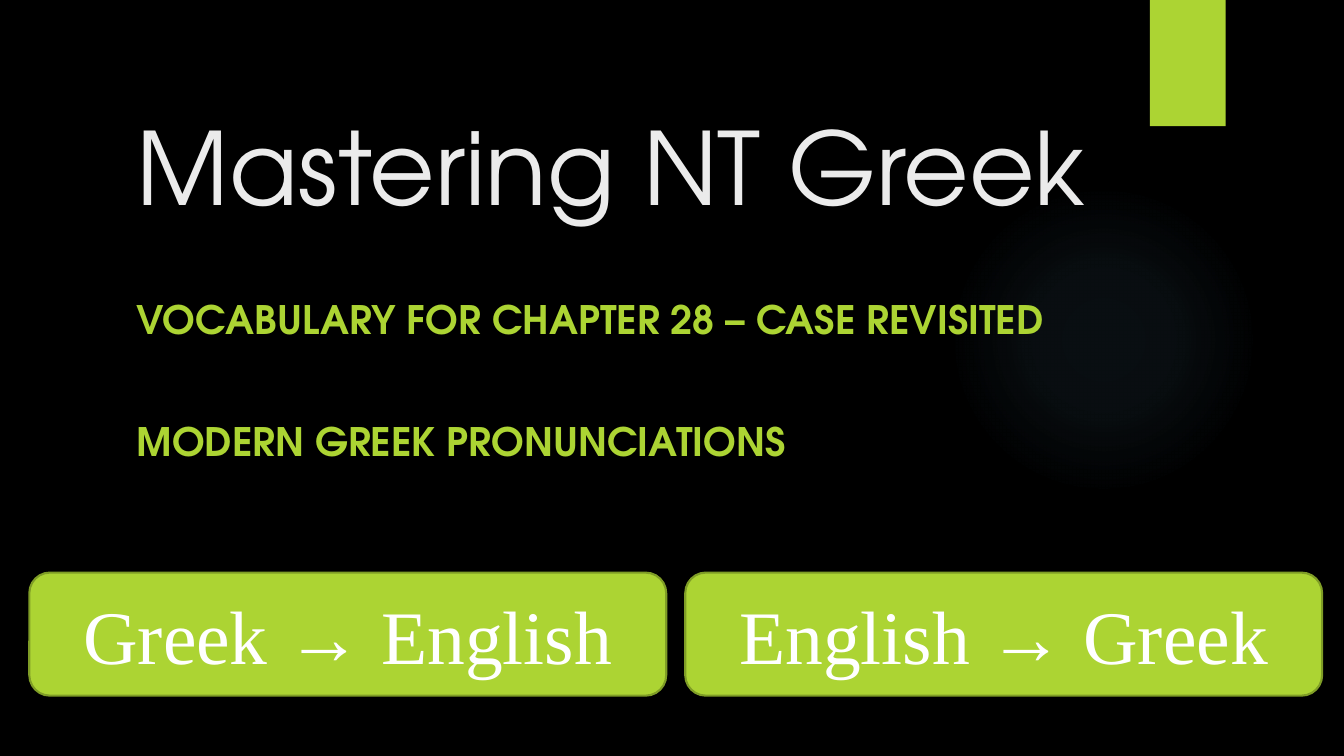
"""Build the title slide of a Greek vocabulary lesson."""
from dataclasses import dataclass

from pptx import Presentation
from pptx.dml.color import RGBColor
from pptx.enum.shapes import MSO_SHAPE as Preset
from pptx.enum.text import MSO_ANCHOR as Anchor, PP_ALIGN as Align
from pptx.oxml import parse_xml
from pptx.oxml.ns import nsdecls
from pptx.shapes.autoshape import Shape
from pptx.slide import Slide
from pptx.text.text import Font
from pptx.util import Cm, Pt

COLORS = {
    "background": "000000",
    "title": "EBEBEB",
    "accent": "ACD433",
    "outline": "7F9D26",
    "button_text": "FFFFFF",
    "glow": "7AC4F0",
}
HEADING_FONT = "TeX Gyre Adventor"
BUTTON_FONT = "Times New Roman"
GLOW_STOPS = ((0, 7), (36, 6), (69, 0))
BUTTON_LEFT, BUTTON_PITCH = 0.74, 16.53


@dataclass(frozen=True)
class Box:
    left: float
    top: float
    width: float
    height: float

    def lengths(self) -> tuple[Cm, Cm, Cm, Cm]:
        return Cm(self.left), Cm(self.top), Cm(self.width), Cm(self.height)


@dataclass(frozen=True)
class TextBlock:
    box: Box
    lines: tuple[str, ...]
    size: int
    color: str
    bold: bool
    anchor: Anchor
    gap: float = 0


TEXT_BLOCKS = (
    TextBlock(Box(3.2, 1.78, 25.5, 4.04), ("Mastering NT Greek",),
              72, "title", False, Anchor.BOTTOM),
    TextBlock(Box(3.2, 7.32, 26.49, 6.83),
              ("VOCABULARY FOR CHAPTER 28 – CASE REVISITED", "MODERN GREEK PRONUNCIATIONS"),
              28, "accent", True, Anchor.TOP, 53.5),
)
BUTTON_LABELS = ("Greek → English", "English → Greek")


def color(name: str) -> RGBColor:
    return RGBColor.from_string(COLORS[name])


def style_font(font: Font, name: str, size: int, color_name: str, bold: bool = False) -> None:
    font.name, font.size, font.bold = name, Pt(size), bold
    font.color.rgb = color(color_name)


def add_filled_shape(slide: Slide, preset: Preset, box: Box) -> Shape:
    shape = slide.shapes.add_shape(preset, *box.lengths())
    shape.shadow.inherit = False
    shape.fill.solid()
    shape.fill.fore_color.rgb = color("accent")
    shape.line.fill.background()
    return shape


def add_glow(slide: Slide, box: Box) -> None:
    shape = add_filled_shape(slide, Preset.OVAL, box)
    stops = "".join(
        f'<a:gs pos="{position * 1000}"><a:srgbClr val="{COLORS["glow"]}">'
        f'<a:alpha val="{alpha * 1000}"/></a:srgbClr></a:gs>'
        for position, alpha in GLOW_STOPS
    )
    gradient = parse_xml(
        f'<a:gradFill {nsdecls("a")} rotWithShape="1"><a:gsLst>{stops}</a:gsLst>'
        '<a:path path="circle"><a:fillToRect l="50000" t="50000" r="50000" b="50000"/>'
        "</a:path></a:gradFill>"
    )
    properties = shape.element.spPr
    properties.replace(properties.find("{*}solidFill"), gradient)


def add_text_block(slide: Slide, block: TextBlock) -> None:
    frame = slide.shapes.add_textbox(*block.box.lengths()).text_frame
    frame.word_wrap = True
    frame.vertical_anchor = block.anchor
    frame.text = "\n".join(block.lines)
    for index, paragraph in enumerate(frame.paragraphs):
        paragraph.space_before = Pt(block.gap if index else 0)
        style_font(paragraph.font, HEADING_FONT, block.size, block.color, block.bold)


def add_button(slide: Slide, box: Box, label: str) -> None:
    shape = add_filled_shape(slide, Preset.ROUNDED_RECTANGLE, box)
    shape.line.color.rgb = color("outline")
    shape.line.width = Pt(1.5)
    frame = shape.text_frame
    frame.vertical_anchor = Anchor.MIDDLE
    frame.text = label
    paragraph = frame.paragraphs[0]
    paragraph.alignment = Align.CENTER
    style_font(paragraph.font, BUTTON_FONT, 54, "button_text")


def main() -> None:
    presentation = Presentation()
    presentation.slide_width, presentation.slide_height = Cm(33.87), Cm(19.05)
    slide = presentation.slides.add_slide(presentation.slide_layouts[6])
    slide.background.fill.solid()
    slide.background.fill.fore_color.rgb = color("background")
    add_glow(slide, Box(23.9, 4.65, 7.82, 7.82))
    add_filled_shape(slide, Preset.RECTANGLE, Box(28.98, 0, 1.91, 3.18))
    for block in TEXT_BLOCKS:
        add_text_block(slide, block)
    for index, label in enumerate(BUTTON_LABELS):
        add_button(slide, Box(BUTTON_LEFT + index * BUTTON_PITCH, 14.43, 16.05, 3.1), label)
    presentation.save("out.pptx")


if __name__ == "__main__":
    main()
